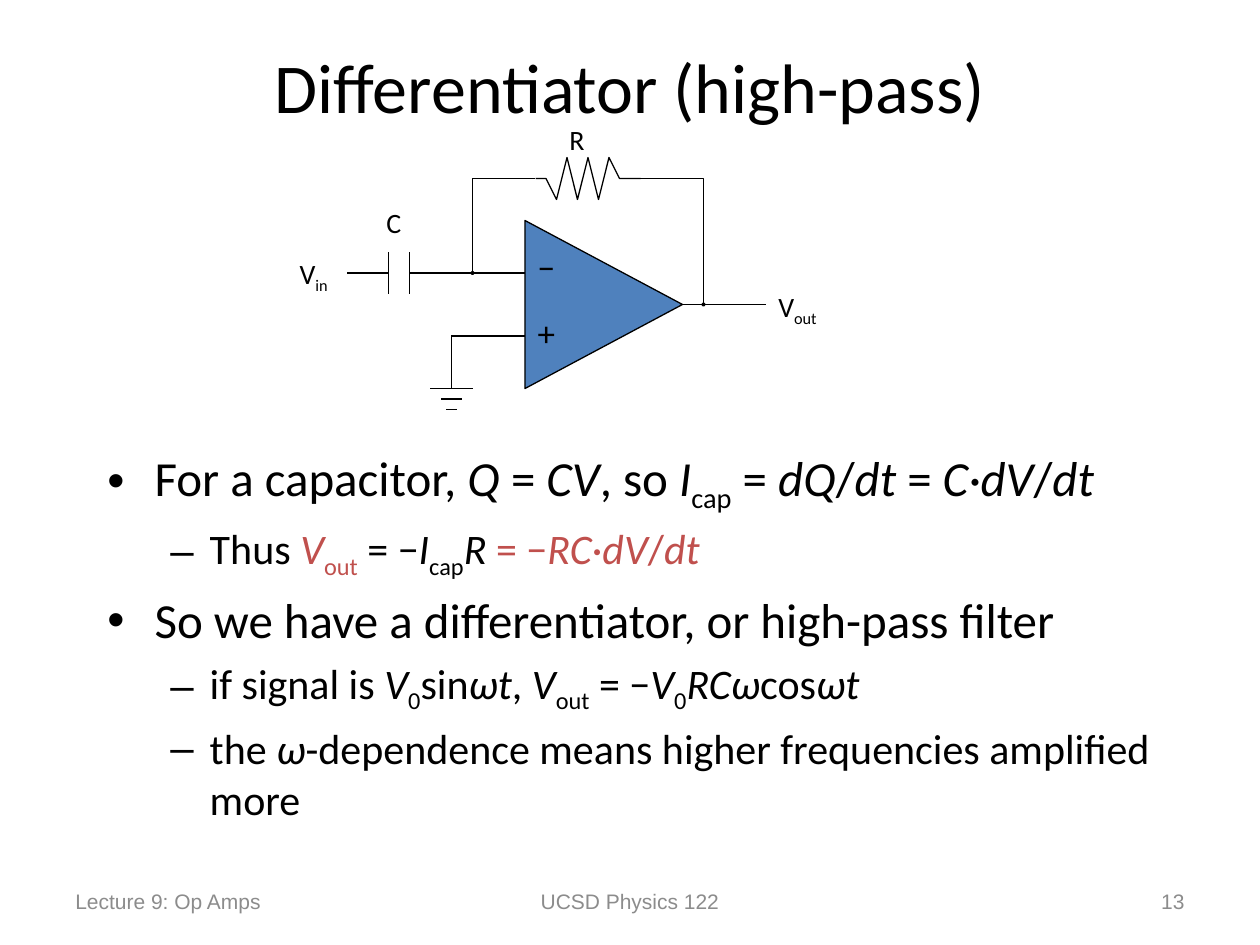
from dataclasses import dataclass
from itertools import groupby

from lxml.etree import SubElement
from pptx import Presentation
from pptx.dml.color import RGBColor
from pptx.enum.shapes import MSO_CONNECTOR, MSO_SHAPE
from pptx.enum.text import MSO_ANCHOR, MSO_AUTO_SIZE, PP_ALIGN
from pptx.oxml.ns import qn
from pptx.util import Cm, Pt


@dataclass(frozen=True)
class Theme:
    font: str = "Calibri"
    footer_font: str = "Arial"
    ink: RGBColor = RGBColor(0x00, 0x00, 0x00)
    accent: RGBColor = RGBColor(0xC0, 0x50, 0x4D)
    amplifier: RGBColor = RGBColor(0x4F, 0x81, 0xBD)
    footer: RGBColor = RGBColor(0x8C, 0x8C, 0x8C)
    title_size: Pt = Pt(40)
    body_sizes: tuple = (Pt(28), Pt(24))
    sign_size: Pt = Pt(20)
    label_size: Pt = Pt(16)
    footer_size: Pt = Pt(12)
    line_width: Pt = Pt(0.75)


theme = Theme()
GRID = Cm(2.54) / 12  # the circuit is drawn on twelve steps to the inch


def grid(*steps):
    """Turn circuit grid steps into slide lengths."""
    return [round(step * GRID) for step in steps]


def write(paragraph, text, size, color=theme.ink, font=theme.font):
    """Fill a paragraph; * toggles italic, _ subscript and ~ the accent colour."""
    paragraph.font.size = size
    paragraph.font.name = font
    paragraph.font.color.rgb = color
    active = set()
    for is_mark, characters in groupby(text, key=lambda character: character in "*_~"):
        if is_mark:
            active ^= set(characters)
            continue
        run = paragraph.add_run()
        run.text = "".join(characters)
        if "*" in active:
            run.font.italic = True
        if "_" in active:
            run._r.get_or_add_rPr().set("baseline", "-25000")
        if "~" in active:
            run.font.color.rgb = theme.accent


presentation = Presentation()
presentation.slide_width, presentation.slide_height = Cm(25.4), Cm(19.05)
slide = presentation.slides.add_slide(presentation.slide_layouts[1])
shapes = slide.shapes

# Footer
footers = [
    ("Lecture 9: Op Amps", 1.27, 5.93, PP_ALIGN.LEFT),
    ("UCSD Physics 122", 8.68, 8.04, PP_ALIGN.CENTER),
    ("13", 18.2, 5.93, PP_ALIGN.RIGHT),
]
for text, left, width, alignment in footers:
    frame = shapes.add_textbox(Cm(left), Cm(17.66), Cm(width), Cm(1.01)).text_frame
    frame.word_wrap = True
    frame.vertical_anchor = MSO_ANCHOR.MIDDLE
    frame.paragraphs[0].alignment = alignment
    write(frame.paragraphs[0], text, theme.footer_size, theme.footer, theme.footer_font)

# Title and list
title = shapes.title
title.left, title.top, title.width, title.height = Cm(1.27), Cm(0.13), Cm(22.86), Cm(3.18)
write(title.text_frame.paragraphs[0], "Differentiator (high-pass)", theme.title_size)

body = slide.placeholders[1]
body.left, body.top, body.width, body.height = Cm(1.91), Cm(8.89), Cm(21.59), Cm(8.47)
body.text_frame.auto_size = MSO_AUTO_SIZE.NONE
points = [
    (0, "For a capacitor, *Q* = *CV*, so *I*_cap_ = *dQ*/*dt* = *C·dV*/*dt*"),
    (1, "Thus ~*V*_out_~ = −*I*_cap_*R *~= −*RC*·*dV*/*dt*~"),
    (0, "So we have a differentiator, or high-pass filter"),
    (1, "if signal is *V*_0_sin*ωt*, *V*_out_ = −*V*_0_*RCω*cos*ωt*"),
    (1, "the *ω*-dependence means higher frequencies amplified more"),
]
for index, (level, text) in enumerate(points):
    paragraph = body.text_frame.add_paragraph() if index else body.text_frame.paragraphs[0]
    paragraph.level = level
    write(paragraph, text, theme.body_sizes[level])

# Amplifier and junction dots
solids = [
    (MSO_SHAPE.ISOSCELES_TRIANGLE, 57.5, 29, 16, 15, 90, theme.amplifier),
    (MSO_SHAPE.OVAL, 45, 26, 0.25, 0.25, 0, theme.ink),
    (MSO_SHAPE.OVAL, 67, 29, 0.25, 0.25, 0, theme.ink),
]
for kind, center_x, center_y, width, height, rotation, fill in solids:
    box = grid(center_x - width / 2, center_y - height / 2, width, height)
    shape = shapes.add_shape(kind, *box)
    shape.rotation = rotation
    shape.shadow.inherit = False
    shape.fill.solid()
    shape.fill.fore_color.rgb = fill
    shape.line.color.rgb = theme.ink
    shape.line.width = theme.line_width

# Straight wires, as x1, y1, x2, y2 in grid steps
wires = [
    (50, 32, 43, 32), (50, 26, 43, 26), (65, 29, 73, 29),  # amplifier leads
    (43, 32, 43, 37),  # down to ground
    (41, 37, 45, 37), (42, 38, 44, 38), (42.5, 39, 43.5, 39),  # ground bars
    (37, 24, 37, 28), (39, 24, 39, 28),  # capacitor plates
    (37, 26, 33, 26), (43, 26, 39, 26),  # capacitor leads
]
for wire in wires:
    connector = shapes.add_connector(MSO_CONNECTOR.STRAIGHT, *grid(*wire))
    connector.line.color.rgb = theme.ink
    connector.line.width = theme.line_width
    SubElement(connector._element.spPr, qn("a:effectLst"))

# Resistor and the bent wires of the feedback loop
zigzag = [(58 - step, 19 if step % 2 else 15) for step in range(1, 7)]
bent_wires = [
    [(61, 17), (59, 17), *zigzag, (52, 17), (51, 17)],
    [(45, 26), (45, 17), (51, 17)],
    [(61, 17), (67, 17), (67, 29)],
]
# The zigzag starts at a peak beside the right-hand lead
bent_wires[0][2:8] = [(58 - step, 19 if step % 2 else 15) for step in range(6)]
for points_on_wire in bent_wires:
    start, *rest = [tuple(grid(*point)) for point in points_on_wire]
    builder = shapes.build_freeform(*start)
    builder.add_line_segments(rest, close=False)
    shape = builder.convert_to_shape()
    shape.shadow.inherit = False
    shape.fill.background()
    shape.line.color.rgb = theme.ink
    shape.line.width = theme.line_width

# Circuit labels
labels = [
    ("−", 10.59, 4.83, 0.89, 1.09, theme.sign_size),
    ("+", 10.59, 6.15, 0.91, 1.09, theme.sign_size),
    ("V_in_", 5.79, 5.05, 1.19, 0.94, theme.label_size),
    ("V_out_", 15.44, 5.72, 1.42, 0.94, theme.label_size),
    ("C", 7.54, 4.01, 0.91, 0.94, theme.label_size),
    ("R", 11.23, 2.34, 0.91, 0.94, theme.label_size),
]
for text, left, top, width, height, size in labels:
    frame = shapes.add_textbox(Cm(left), Cm(top), Cm(width), Cm(height)).text_frame
    frame.word_wrap = False
    frame.auto_size = MSO_AUTO_SIZE.SHAPE_TO_FIT_TEXT
    write(frame.paragraphs[0], text, size)

presentation.save("out.pptx")
